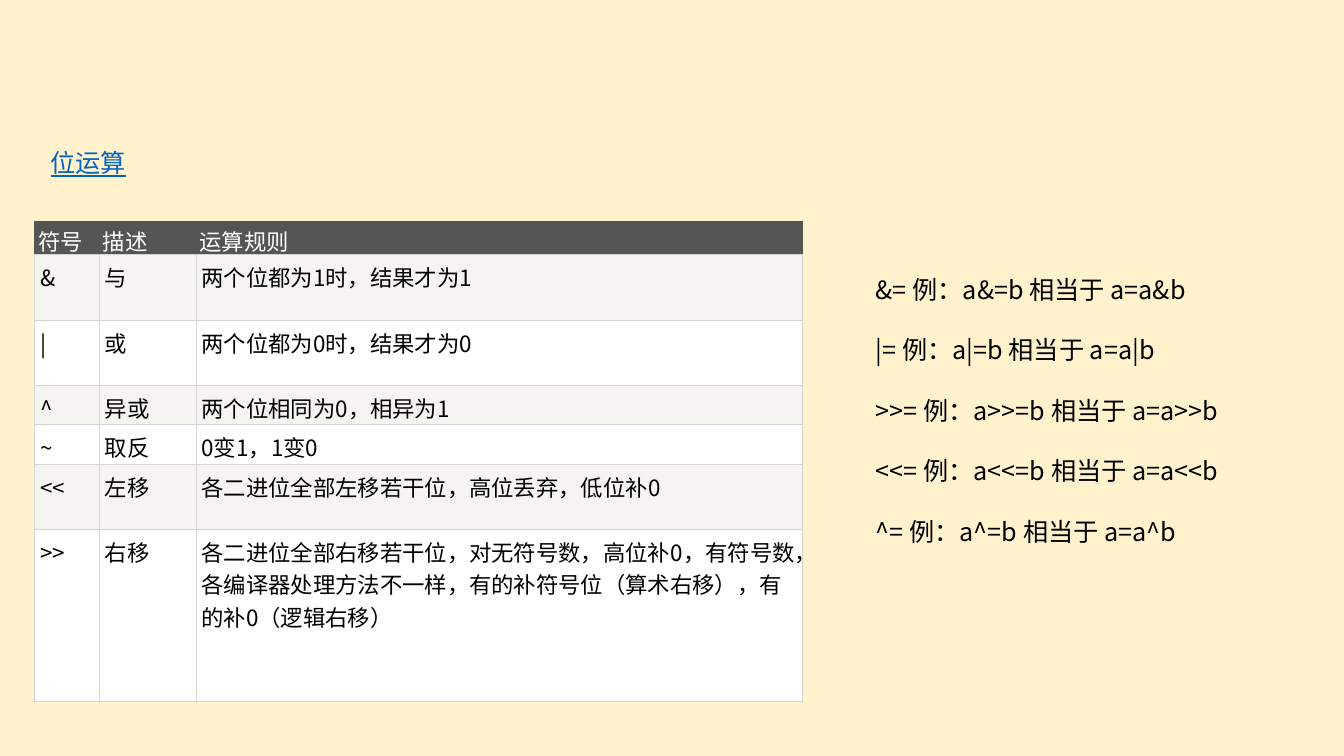
from dataclasses import dataclass

from lxml.etree import SubElement
from pptx import Presentation
from pptx.dml.color import RGBColor as RGB
from pptx.enum.text import MSO_ANCHOR as Anchor, MSO_AUTO_SIZE as AutoSize, PP_ALIGN as Align
from pptx.oxml.ns import qn
from pptx.util import Cm, Pt


@dataclass(frozen=True)
class Theme:
    font: str = "Noto Sans CJK SC"
    background: str = "FFF2CC"
    ink: str = "000000"
    link: str = "0563C1"
    header: str = "555555"
    header_ink: str = "FFFFFF"
    bands: tuple = ("F6F4F0", "FFFFFF")
    border: str = "D4D4D4"
    border_width: float = 0.75
    body_size: int = 18
    table_size: int = 16
    line_pitch: float = 21.6


ROWS = [
    ("符号", "描述", "运算规则"),
    ("&", "与", "两个位都为1时，结果才为1"),
    ("|", "或", "两个位都为0时，结果才为0"),
    ("^", "异或", "两个位相同为0，相异为1"),
    ("~", "取反", "0变1，1变0"),
    ("<<", "左移", "各二进位全部左移若干位，高位丢弃，低位补0"),
    (">>", "右移", "各二进位全部右移若干位，对无符号数，高位补0，有符号数，"
                   "各编译器处理方法不一样，有的补符号位（算术右移），有的补0（逻辑右移）"),
]
COL_WIDTHS = (1.63, 2.44, 15.26)
ROW_HEIGHTS = (0.81, 1.65, 1.65, 0.99, 0.99, 1.65, 4.32)
OPERATORS = ("&", "|", ">>", "<<", "^")


def assign(target, values):
    for name, value in values.items():
        setattr(target, name, value)


class SlideBuilder:
    def __init__(self, prs, theme):
        self.theme = theme
        self.s = prs.slides.add_slide(prs.slide_layouts[5])
        fill = self.s.background.fill
        fill.solid()
        fill.fore_color.rgb = RGB.from_string(theme.background)

    def run(self, p, text, size, color, **font):
        r = p.add_run()
        r.text = text
        assign(r.font, {"name": self.theme.font, "size": Pt(size), **font})
        r.font.color.rgb = RGB.from_string(color)
        r_pr = r._r.get_or_add_rPr()
        ea = SubElement(r_pr, qn("a:ea"), typeface=self.theme.font)
        r_pr.find(qn("a:latin")).addnext(ea)

    def title(self, text, *box):
        t = self.theme
        sp = self.s.shapes.title
        assign(sp, dict(zip(("left", "top", "width", "height"), map(Cm, box))))
        tf = sp.text_frame
        assign(tf, {"word_wrap": False, "auto_size": AutoSize.SHAPE_TO_FIT_TEXT,
                    "vertical_anchor": Anchor.TOP})
        p = tf.paragraphs[0]
        assign(p, {"alignment": Align.LEFT, "line_spacing": Pt(t.line_pitch)})
        self.run(p, text, t.body_size, t.link, underline=True)

    def text(self, lines, *box):
        """Add a text box with one line's height of space between lines."""
        t = self.theme
        tf = self.s.shapes.add_textbox(*map(Cm, box)).text_frame
        tf.word_wrap = True
        for i, line in enumerate(lines):
            p = tf.add_paragraph() if i else tf.paragraphs[0]
            assign(p, {"line_spacing": Pt(t.line_pitch),
                       "space_before": Pt(t.line_pitch if i else 0)})
            self.run(p, line, t.body_size, t.ink)

    def borders(self, cell, colors):
        """Draw the left, right, top and bottom borders ahead of the cell fill."""
        tc_pr = cell._tc.get_or_add_tcPr()
        for i, (side, color) in enumerate(zip("LRTB", colors)):
            ln = SubElement(tc_pr, qn(f"a:ln{side}"), w=str(Pt(self.theme.border_width)))
            SubElement(SubElement(ln, qn("a:solidFill")), qn("a:srgbClr"), val=color)
            tc_pr.insert(i, ln)

    def cell(self, cell, text, row):
        t = self.theme
        head = row == 0
        x, y = (0.08, 0.08) if head else (0.13, 0.15)
        assign(cell, {"margin_left": Cm(x), "margin_right": Cm(x),
                      "margin_top": Cm(y), "margin_bottom": Cm(y)})
        cell.fill.solid()
        cell.fill.fore_color.rgb = RGB.from_string(t.header if head else t.bands[(row - 1) % 2])
        edge = t.header if head else t.border
        self.borders(cell, (edge, edge, edge, t.border))
        self.run(cell.text_frame.paragraphs[0], text, t.table_size,
                 t.header_ink if head else t.ink)

    def table(self, rows, widths, heights, left, top):
        box = map(Cm, (left, top, sum(widths), sum(heights)))
        table = self.s.shapes.add_table(len(rows), len(widths), *box).table
        for column, width in zip(table.columns, widths):
            column.width = Cm(width)
        for i, (values, height) in enumerate(zip(rows, heights)):
            table.rows[i].height = Cm(height)
            for j, value in enumerate(values):
                self.cell(table.cell(i, j), value, i)


def main():
    prs = Presentation()
    assign(prs, {"slide_width": Cm(33.87), "slide_height": Cm(19.05)})
    slide = SlideBuilder(prs, Theme())
    slide.title("位运算", 1.02, 3.58, 2.44, 1.02)
    slide.table(ROWS, COL_WIDTHS, ROW_HEIGHTS, 0.88, 5.58)
    slide.text([f"{op}= 例：a{op}=b 相当于 a=a{op}b" for op in OPERATORS],
               21.82, 6.78, 11.86, 7.19)
    prs.save("out.pptx")


if __name__ == "__main__":
    main()
